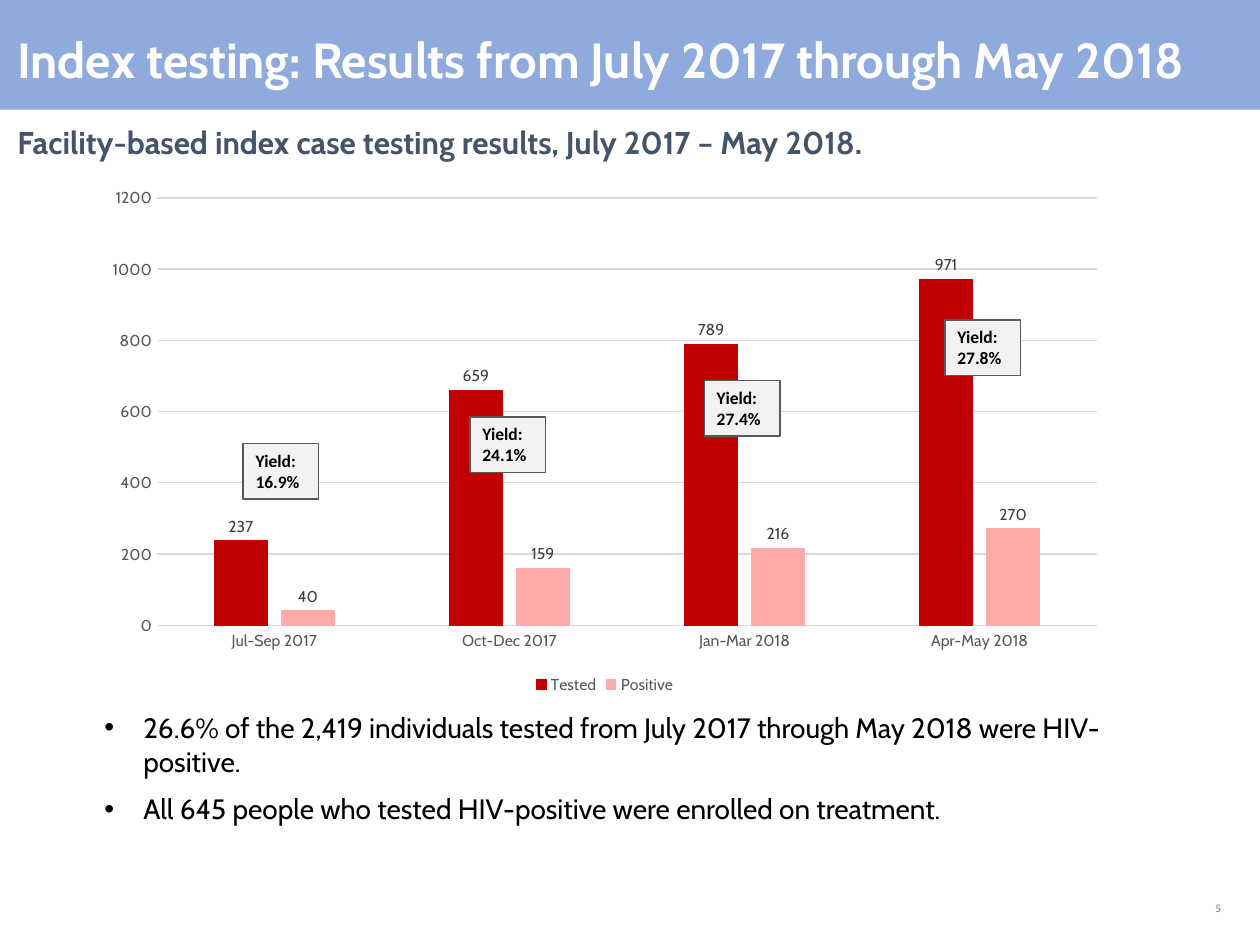
from lxml import etree
from pptx import Presentation
from pptx.chart.data import CategoryChartData
from pptx.dml.color import RGBColor
from pptx.enum.chart import XL_CHART_TYPE as ChartType
from pptx.enum.chart import XL_LABEL_POSITION as LabelPosition
from pptx.enum.chart import XL_LEGEND_POSITION as LegendPosition
from pptx.enum.chart import XL_TICK_MARK as TickMark
from pptx.enum.shapes import MSO_SHAPE as Shape
from pptx.enum.text import MSO_ANCHOR as Anchor
from pptx.enum.text import PP_ALIGN as Align
from pptx.oxml.ns import qn
from pptx.util import Inches, Pt

COLORS = {
    "band": "8FAADC", "white": "FFFFFF", "heading": "44546A", "black": "000000",
    "tested": "C00000", "positive": "FFABAB", "grid": "D9D9D9", "axis": "595959",
    "label": "404040", "callout": "F2F2F2", "number": "8C8C8C",
}


def color(name):
    return RGBColor.from_string(COLORS[name])


class SlideBuilder:
    def __init__(self, slide, font="Cabin"):
        self.slide = slide
        self.font = font

    def style_font(self, font, size, color_name, bold=False, name=None):
        font.name = name or self.font
        font.size = Pt(size)
        font.bold = bold
        font.color.rgb = color(color_name)

    def rectangle(self, left, top, width, height, fill, line=None):
        box = self.slide.shapes.add_shape(
            Shape.RECTANGLE, Inches(left), Inches(top), Inches(width), Inches(height))
        box.shadow.inherit = False
        box.fill.solid()
        box.fill.fore_color.rgb = color(fill)
        if line:
            box.line.color.rgb = color(line)
            box.line.width = Pt(0.75)
        else:
            box.line.fill.background()
        return box

    def text(self, left, top, width, height, lines, size, color_name, bold=False,
             anchor=Anchor.TOP, align=Align.LEFT, space_after=0, bullet=False):
        box = self.slide.shapes.add_textbox(
            Inches(left), Inches(top), Inches(width), Inches(height))
        frame = box.text_frame
        frame.word_wrap = True
        frame.vertical_anchor = anchor
        frame.text = "\n".join(lines)
        for para in frame.paragraphs:
            if bullet:
                self.add_bullet(para)
            para.alignment = align
            para.space_after = Pt(space_after)
            for span in para.runs:
                self.style_font(span.font, size, color_name, bold)
        return box

    def add_bullet(self, para, indent=0.31):
        props = para._p.get_or_add_pPr()
        props.set("marL", str(Inches(indent)))
        props.set("indent", str(-Inches(indent)))
        etree.SubElement(props, qn("a:buFont")).set("typeface", "Arial")
        etree.SubElement(props, qn("a:buChar")).set("char", "•")

    def callout(self, left, top, text):
        box = self.rectangle(left, top, 0.6, 0.44, "callout", "axis")
        frame = box.text_frame
        frame.word_wrap = True
        frame.vertical_anchor = Anchor.TOP
        frame.text = text
        para = frame.paragraphs[0]
        para.alignment = Align.LEFT
        self.style_font(para.runs[0].font, 10, "black", True, "Calibri")

    def column_chart(self, left, top, width, height, categories, series):
        data = CategoryChartData()
        data.categories = categories
        for name, values in series.items():
            data.add_series(name, values)
        chart = self.slide.shapes.add_chart(
            ChartType.COLUMN_CLUSTERED, Inches(left), Inches(top),
            Inches(width), Inches(height), data).chart
        self.style_font(chart.font, 10, "black")
        chart.has_title = False

        # Legend
        chart.has_legend = True
        chart.legend.position = LegendPosition.BOTTOM
        chart.legend.include_in_layout = False
        self.style_font(chart.legend.font, 9, "axis")

        # Axes
        for axis in (chart.category_axis, chart.value_axis):
            axis.major_tick_mark = axis.minor_tick_mark = TickMark.NONE
            self.style_font(axis.tick_labels.font, 9, "axis")
        grid = chart.value_axis.major_gridlines.format.line
        for line in (chart.category_axis.format.line, grid):
            line.color.rgb = color("grid")
            line.width = Pt(0.75)
        chart.value_axis.format.line.fill.background()
        chart.value_axis.minimum_scale = 0
        chart.value_axis.maximum_scale = 1200
        chart.value_axis.major_unit = 200

        # Columns and their labels
        plot = chart.plots[0]
        plot.gap_width = 219
        plot.overlap = -27
        plot.vary_by_categories = False
        for column in plot.series:
            fill = color(column.name.lower())
            column.format.fill.solid()
            column.format.fill.fore_color.rgb = fill
            column.format.line.color.rgb = fill
            column.format.line.width = Pt(0.75)
            labels = column.data_labels
            labels.show_value = True
            labels.position = LabelPosition.OUTSIDE_END
            self.style_font(labels.font, 9, "label")


def main():
    deck = Presentation()
    deck.slide_width, deck.slide_height = Inches(10), Inches(7.5)
    page = SlideBuilder(deck.slides.add_slide(deck.slide_layouts[6]))

    # Title band and subtitle
    page.rectangle(0, 0, 10, 0.87, "band")
    page.text(0.04, 0, 9.96, 0.75,
              ["Index testing: Results from July 2017 through May 2018"],
              28.1, "white", bold=True, anchor=Anchor.BOTTOM)
    page.text(0.04, 0.93, 9.48, 0.41,
              ["Facility-based index case testing results, July 2017 – May 2018."],
              18, "heading", bold=True, space_after=9)

    # Results chart
    page.column_chart(
        0.73, 1.41, 8.14, 4.14,
        ["Jul-Sep 2017", "Oct-Dec 2017", "Jan-Mar 2018", "Apr-May 2018"],
        {"Tested": [237, 659, 789, 971], "Positive": [40, 159, 216, 270]})

    # Yield callouts
    for left, top, share in [(1.93, 3.52, "16.9%"), (3.73, 3.31, "24.1%"),
                             (5.59, 3.02, "27.4%"), (7.5, 2.54, "27.8%")]:
        page.callout(left, top, f"Yield: {share}")

    # Findings
    page.text(0.73, 5.59, 8.84, 1.02, [
        "26.6% of the 2,419 individuals tested from July 2017 through May 2018 "
        "were HIV-positive.",
        "All 645 people who tested HIV-positive were enrolled on treatment.",
    ], 16, "black", space_after=8, bullet=True)

    # Slide number
    page.text(9.21, 7.01, 0.58, 0.4, ["5"], 6, "number",
              anchor=Anchor.MIDDLE, align=Align.RIGHT)

    deck.save("out.pptx")


if __name__ == "__main__":
    main()
